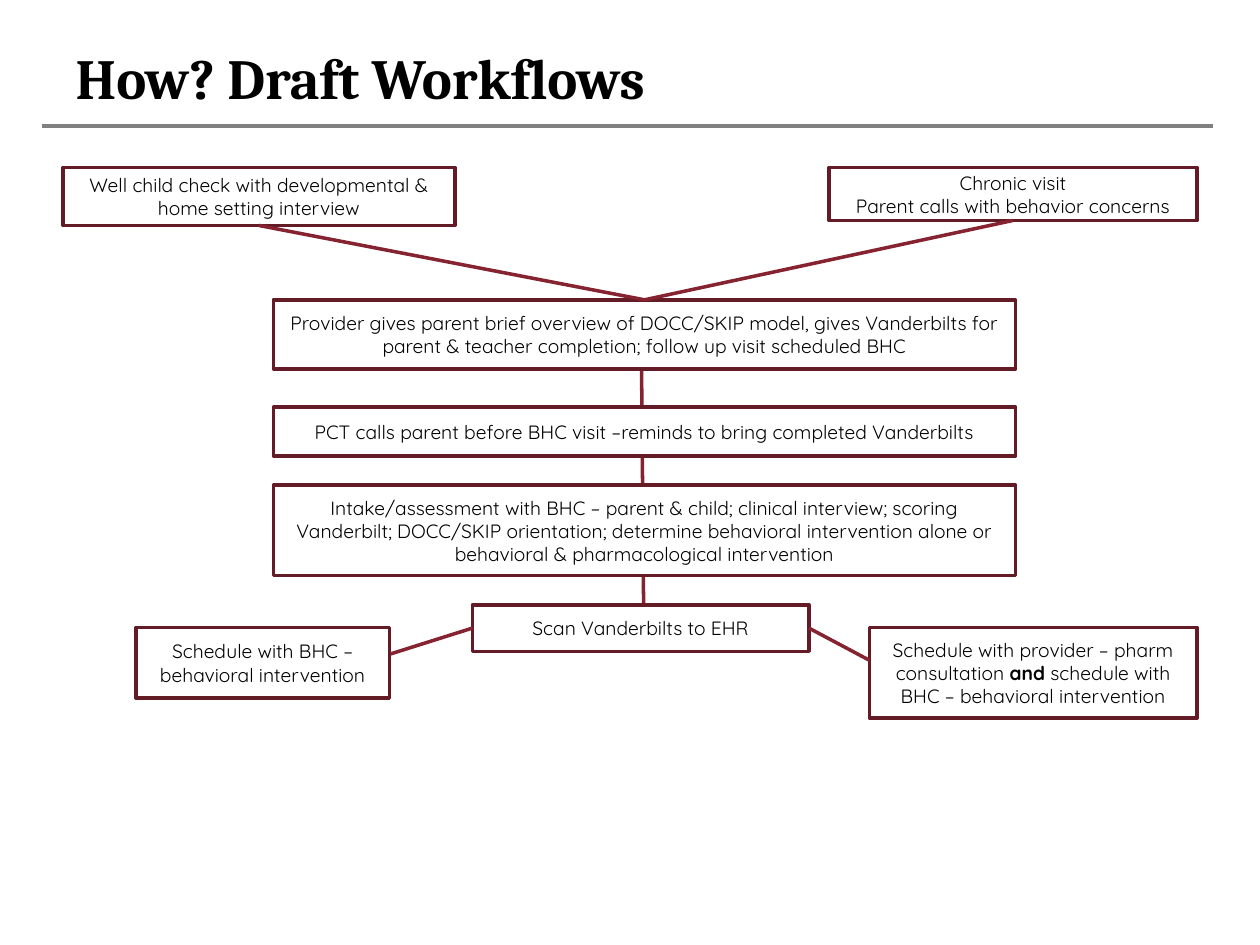
import dataclasses

import lxml.etree
import pptx
import pptx.dml.color
import pptx.enum.shapes
import pptx.enum.text
import pptx.oxml.ns
import pptx.util


@dataclasses.dataclass(frozen=True)
class Theme:
    heading_font: str = "Cambria"
    body_font: str = "Quicksand"
    title_size: float = 32.4
    body_size: float = 11
    title_rule_width: float = 2.25
    line_width: float = 2
    text: str = "000000"
    box_fill: str = "FFFFFF"
    box_border: str = "631C26"
    link: str = "852330"
    title_rule: str = "808080"


THEME = Theme()
SLIDE_WIDTH = pptx.util.Inches(10)
SLIDE_HEIGHT = pptx.util.Inches(7.5)

# Connection sites of a rectangle
TOP, LEFT, BOTTOM, RIGHT = range(4)

# The central steps share one column; all positions are percent of the slide.
COLUMN_LEFT, COLUMN_WIDTH = 21.7, 58.9
ENTRY_TOP, OUTCOME_TOP = 17.73, 66.4

# Name: (left, top, width, height, paragraphs); bold runs are marked by **.
STEPS = {
    "well child": (5, ENTRY_TOP, 31.1, 6.13, [
        "Well child check with developmental & home setting interview"]),
    "chronic": (65.8, ENTRY_TOP, 29.2, 5.6, [
        "Chronic visit", "Parent calls with behavior concerns"]),
    "overview": (COLUMN_LEFT, 31.73, COLUMN_WIDTH, 7.33, [
        "Provider gives parent brief overview of DOCC/SKIP model, gives "
        "Vanderbilts for parent & teacher completion; follow up visit "
        "scheduled BHC"]),
    "reminder": (COLUMN_LEFT, 43.07, COLUMN_WIDTH, 5.2, [
        "PCT calls parent before BHC visit –reminds to bring completed "
        "Vanderbilts"]),
    "intake": (COLUMN_LEFT, 51.33, COLUMN_WIDTH, 9.6, [
        "Intake/assessment with BHC – parent & child; clinical interview; "
        "scoring Vanderbilt; DOCC/SKIP orientation; determine behavioral "
        "intervention alone or behavioral & pharmacological intervention"]),
    "scan": (37.5, 64, 26.7, 4.93, ["Scan Vanderbilts to EHR"]),
    "provider": (69, OUTCOME_TOP, 26, 9.6, [
        "Schedule with provider – pharm consultation **and** schedule with "
        "BHC – behavioral intervention"]),
    "behavioral": (10.8, OUTCOME_TOP, 20.1, 7.47, [
        "Schedule with BHC – behavioral intervention"]),
}


def across(percent):
    return round(SLIDE_WIDTH * percent / 100)


def down(percent):
    return round(SLIDE_HEIGHT * percent / 100)


def color(value):
    return pptx.dml.color.RGBColor.from_string(value)


def style_font(font, name, size):
    font.name = name
    font.size = pptx.util.Pt(size)
    font.color.rgb = color(THEME.text)


def add_title(slide, text):
    title = slide.shapes.title
    title.left, title.top = across(5), down(4)
    title.width, title.height = across(90), down(8.27)
    frame = title.text_frame
    frame.text = text
    frame.auto_size = pptx.enum.text.MSO_AUTO_SIZE.NONE
    frame.vertical_anchor = pptx.enum.text.MSO_ANCHOR.MIDDLE
    paragraph = frame.paragraphs[0]
    paragraph.alignment = pptx.enum.text.PP_ALIGN.LEFT
    style_font(paragraph.font, THEME.heading_font, THEME.title_size)
    paragraph.font.bold = True


def add_line(slide, start, end, line_color=THEME.link, width=THEME.line_width):
    connector = slide.shapes.add_connector(
        pptx.enum.shapes.MSO_CONNECTOR.STRAIGHT,
        across(start[0]), down(start[1]), across(end[0]), down(end[1]))
    connector.line.color.rgb = color(line_color)
    connector.line.width = pptx.util.Pt(width)
    properties = connector._element.spPr
    lxml.etree.SubElement(properties, pptx.oxml.ns.qn("a:effectLst"))
    return connector


def add_step(slide, left, top, width, height, paragraphs):
    shape = slide.shapes.add_shape(
        pptx.enum.shapes.MSO_SHAPE.RECTANGLE,
        across(left), down(top), across(width), down(height))
    shape.shadow.inherit = False
    shape.fill.solid()
    shape.fill.fore_color.rgb = color(THEME.box_fill)
    shape.line.color.rgb = color(THEME.box_border)
    shape.line.width = pptx.util.Pt(THEME.line_width)
    frame = shape.text_frame
    frame.word_wrap = True
    frame.vertical_anchor = pptx.enum.text.MSO_ANCHOR.MIDDLE
    for index, text in enumerate(paragraphs):
        paragraph = frame.add_paragraph() if index else frame.paragraphs[0]
        paragraph.alignment = pptx.enum.text.PP_ALIGN.CENTER
        style_font(paragraph.font, THEME.body_font, THEME.body_size)
        for position, part in enumerate(text.split("**")):
            run = paragraph.add_run()
            run.text = part
            if position % 2:
                run.font.bold = True
    return shape


def main():
    presentation = pptx.Presentation()
    presentation.slide_width = SLIDE_WIDTH
    presentation.slide_height = SLIDE_HEIGHT
    slide = presentation.slides.add_slide(presentation.slide_layouts[5])

    add_line(slide, (3.3, 13.33), (96.3, 13.33),
             THEME.title_rule, THEME.title_rule_width)
    add_title(slide, "How? Draft Workflows")

    # The spine runs behind the central steps.
    add_line(slide, (50.9, 35.87), (51.1, 66.93))
    steps = {name: add_step(slide, *step) for name, step in STEPS.items()}

    for entry in ("well child", "chronic"):
        link = add_line(slide, (0, 0), (0, 0))
        link.begin_connect(steps[entry], BOTTOM)
        link.end_connect(steps["overview"], TOP)
    for side, end in ((LEFT, (31, 69.2)), (RIGHT, (69, 69.87))):
        link = add_line(slide, end, end)
        link.begin_connect(steps["scan"], side)

    presentation.save("out.pptx")


if __name__ == "__main__":
    main()
